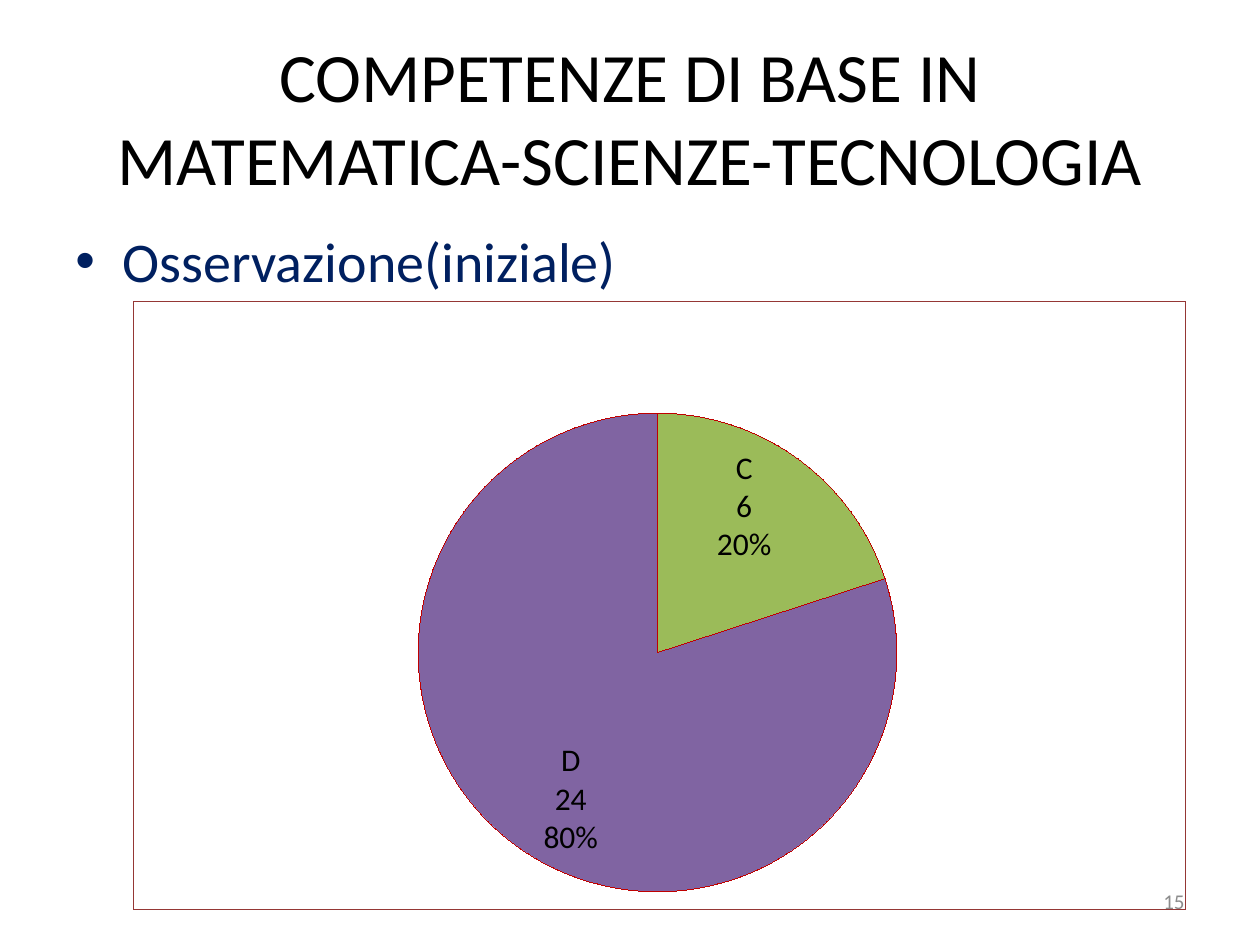
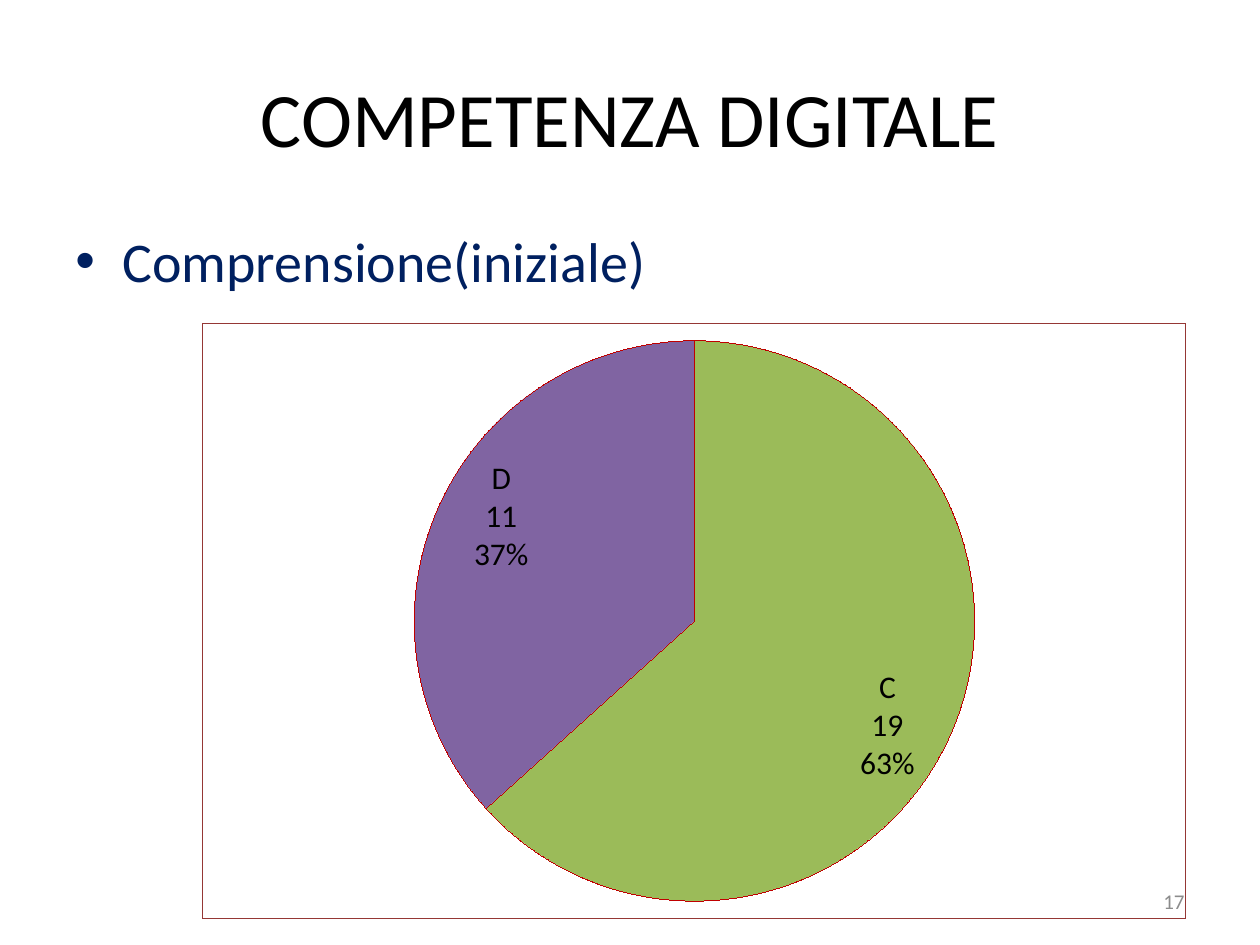
import lxml.etree
import pptx
import pptx.chart.data
import pptx.dml.color
import pptx.enum.chart
import pptx.enum.text
import pptx.oxml
import pptx.oxml.ns
import pptx.util

Cm = pptx.util.Cm
Pt = pptx.util.Pt
qn = pptx.oxml.ns.qn
Align = pptx.enum.text.PP_ALIGN
Anchor = pptx.enum.text.MSO_ANCHOR

FONT = "Calibri"
COLOURS = {
    "title": "000000",
    "body": "002060",
    "number": "8C8C8C",
    "label": "000000",
    "frame": "953735",
    "slice_line": "C00000",
}
LEVELS = {"A": "4F81BD", "B": "C0504D", "C": "9BBB59", "D": "8064A2"}
TEXT_STYLES = {
    "title": {
        "box": (1.27, 0.76, 22.86, 3.18),
        "anchor": Anchor.MIDDLE,
        "paragraph": {"alignment": Align.CENTER},
    },
    "body": {
        "box": (1.27, 4.45, 22.86, 12.57),
        "anchor": Anchor.TOP,
        "paragraph": {"alignment": Align.LEFT, "space_before": Pt(6.4)},
    },
    "number": {
        "box": (18.21, 17.65, 5.92, 1.02),
        "anchor": Anchor.MIDDLE,
        "paragraph": {"alignment": Align.RIGHT},
    },
}
SLIDES = [
    {
        "texts": {
            "title": ("COMPETENZE DI BASE IN MATEMATICA-SCIENZE-TECNOLOGIA", 39.6),
            "body": ("Osservazione(iniziale)", 32),
            "number": ("15", 12),
        },
        "pupils": (0, 0, 6, 24),
        "chart_box": (2.69, 6.07, 21.21, 12.27),
        "pie_circle": (8.43, 8.33, 9.65),
    },
    {
        "texts": {
            "title": ("COMPETENZA DIGITALE", 44),
            "body": ("Comprensione(iniziale)", 32),
            "number": ("17", 12),
        },
        "pupils": (0, 0, 19, 11),
        "chart_box": (4.09, 6.53, 19.81, 11.99),
        "pie_circle": (8.35, 6.87, 11.3),
    },
]


def rgb(name):
    return pptx.dml.color.RGBColor.from_string(COLOURS.get(name) or LEVELS[name])


def chart_xml(tag, content):
    namespaces = pptx.oxml.ns.nsdecls("c", "a")
    return pptx.oxml.parse_xml(f"<c:{tag} {namespaces}>{content}</c:{tag}>")


presentation = pptx.Presentation()
presentation.slide_width = Cm(25.4)
presentation.slide_height = Cm(19.05)

for content in SLIDES:
    slide = presentation.slides.add_slide(presentation.slide_layouts[6])

    for role, (text, size) in content["texts"].items():
        style = TEXT_STYLES[role]
        shape = slide.shapes.add_textbox(*map(Cm, style["box"]))
        shape.text_frame.word_wrap = True
        shape.text_frame.vertical_anchor = style["anchor"]
        paragraph = shape.text_frame.paragraphs[0]
        for attribute, value in style["paragraph"].items():
            setattr(paragraph, attribute, value)
        run = paragraph.add_run()
        run.text = text
        for attribute, value in {"name": FONT, "size": Pt(size)}.items():
            setattr(run.font, attribute, value)
        run.font.color.rgb = rgb(role)
        if role == "body":
            properties = paragraph._p.get_or_add_pPr()
            properties.set("marL", str(Cm(0.95)))
            properties.set("indent", str(-Cm(0.95)))
            bullet_font = lxml.etree.SubElement(properties, qn("a:buFont"))
            bullet_font.set("typeface", "Arial")
            bullet = lxml.etree.SubElement(properties, qn("a:buChar"))
            bullet.set("char", "•")

    chart_data = pptx.chart.data.CategoryChartData()
    chart_data.categories = list(LEVELS)
    chart_data.add_series("Series 1", content["pupils"])
    chart = slide.shapes.add_chart(
        pptx.enum.chart.XL_CHART_TYPE.PIE,
        *map(Cm, content["chart_box"]),
        chart_data,
    ).chart
    chart.has_title = False
    chart.has_legend = False
    for attribute, value in {"name": FONT, "size": Pt(18)}.items():
        setattr(chart.font, attribute, value)
    chart.font.color.rgb = rgb("label")

    frame = chart_xml(
        "spPr",
        "<a:noFill/><a:ln><a:solidFill>"
        f'<a:srgbClr val="{COLOURS["frame"]}"/></a:solidFill></a:ln>',
    )
    chart._chartSpace.find(qn("c:chart")).addnext(frame)

    plot_area = chart._chartSpace.find(".//" + qn("c:plotArea"))
    for layout in plot_area.findall(qn("c:layout")):
        plot_area.remove(layout)
    chart_left, chart_top, chart_width, chart_height = content["chart_box"]
    pie_left, pie_top, diameter = content["pie_circle"]
    settings = {
        "layoutTarget": "inner",
        "xMode": "edge",
        "yMode": "edge",
        "x": (pie_left - chart_left) / chart_width,
        "y": (pie_top - chart_top) / chart_height,
        "w": diameter / chart_width,
        "h": diameter / chart_height,
    }
    position = "".join(f'<c:{tag} val="{value}"/>' for tag, value in settings.items())
    plot_area.insert(0, chart_xml("layout", f"<c:manualLayout>{position}</c:manualLayout>"))

    plot = chart.plots[0]
    plot.vary_by_categories = True
    series = plot.series[0]
    for index, level in enumerate(LEVELS):
        point = series.points[index]
        point.format.fill.solid()
        point.format.fill.fore_color.rgb = rgb(level)
        point.format.line.color.rgb = rgb("slice_line")

    labels = series.data_labels
    label_format = {
        "show_value": True,
        "show_category_name": True,
        "show_percentage": True,
        "position": pptx.enum.chart.XL_LABEL_POSITION.BEST_FIT,
    }
    for attribute, value in label_format.items():
        setattr(labels, attribute, value)
    separator = chart_xml("separator", "\n")
    labels._element.find(qn("c:showBubbleSize")).addnext(separator)
    empty_levels = [i for i, count in enumerate(content["pupils"]) if count == 0]
    for place, index in enumerate(empty_levels):
        hidden_label = chart_xml("dLbl", f'<c:idx val="{index}"/><c:delete val="1"/>')
        labels._element.insert(place, hidden_label)

presentation.save("out.pptx")
